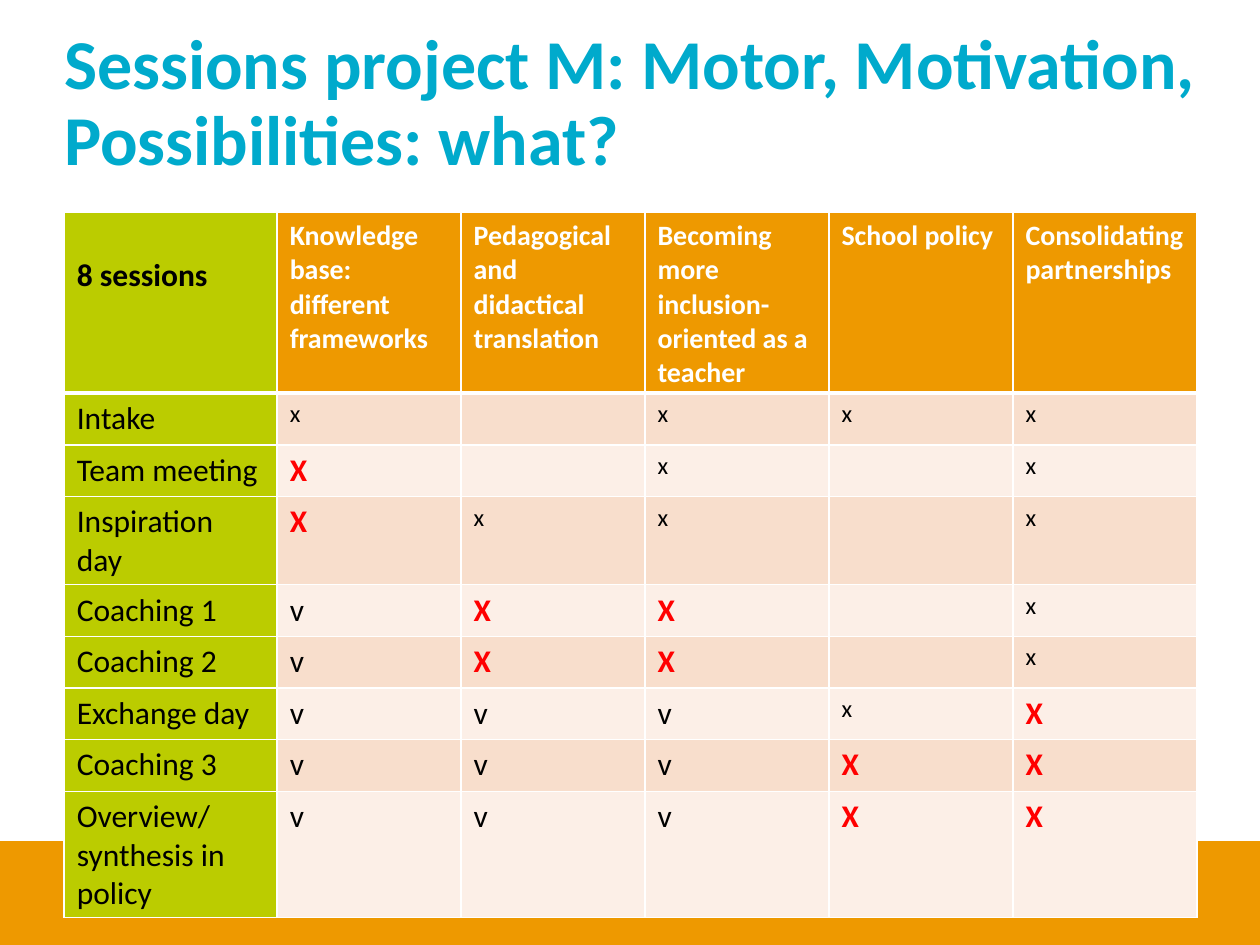
from typing import NamedTuple

from lxml.etree import SubElement
from pptx import Presentation
from pptx.dml.color import RGBColor
from pptx.enum.shapes import MSO_SHAPE
from pptx.enum.text import MSO_ANCHOR
from pptx.oxml.ns import qn
from pptx.util import Inches, Pt

WIDTH, HEIGHT = Inches(10), Inches(7.5)
LEFT, CONTENT_WIDTH = 0.051, 0.898  # shares of the slide width
FONT = "Calibri"
COLORS = {
    "title": "00AACC",
    "orange": "EE9900",
    "green": "BBCC00",
    "dark_band": "F8DECC",
    "light_band": "FCEFE7",
    "white": "FFFFFF",
    "black": "000000",
    "red": "FF0000",
}


class TextStyle(NamedTuple):
    size: int
    color: str
    bold: bool = False


class Session(NamedTuple):
    label: str
    marks: str  # one per theme; "-" leaves the cell empty
    height: float = 0.41


TITLE = TextStyle(40, "title", True)
CORNER = TextStyle(18, "black", True)
THEME = TextStyle(16, "white", True)
LABEL = TextStyle(18, "black")
MARKS = {
    "x": TextStyle(14, "black"),
    "X": TextStyle(18, "red", True),
    "v": TextStyle(18, "black"),
}

THEMES = [
    "Knowledge base: different frameworks",
    "Pedagogical and didactical translation",
    "Becoming more inclusion-oriented as a teacher",
    "School policy",
    "Consolidating partnerships",
]
SESSIONS = [
    Session("Intake", "x-xxx"),
    Session("Team meeting", "X-x-x"),
    Session("Inspiration day", "Xxx-x"),
    Session("Coaching 1", "vXX-x"),
    Session("Coaching 2", "vXX-x"),
    Session("Exchange day", "vvvxX"),
    Session("Coaching 3", "vvvXX"),
    Session("Overview/ synthesis in policy", "vvvXX", 0.7),
]
HEADER_HEIGHT = 1.4
LABEL_WIDTH, THEME_WIDTH = 1.69, 1.46


def rgb(name: str) -> RGBColor:
    return RGBColor.from_string(COLORS[name])


def write(frame, text: str, style: TextStyle) -> None:
    frame.text = text
    for run in frame.paragraphs[0].runs:
        run.font.name = FONT
        run.font.size = Pt(style.size)
        run.font.bold = style.bold
        run.font.color.rgb = rgb(style.color)


def set_borders(cell, bottom: int) -> None:
    properties = cell._tc.get_or_add_tcPr()
    for side, points in (("L", 1), ("R", 1), ("T", 1), ("B", bottom)):
        line = SubElement(properties, qn(f"a:ln{side}"), w=str(Pt(points)))
        fill = SubElement(line, qn("a:solidFill"))
        SubElement(fill, qn("a:srgbClr"), val=COLORS["white"])


def fill_cell(cell, text: str, style: TextStyle, color: str, bottom: int = 1) -> None:
    set_borders(cell, bottom)
    cell.fill.solid()
    cell.fill.fore_color.rgb = rgb(color)
    write(cell.text_frame, text, style)


def add_footer_band(slide) -> None:
    top = int(HEIGHT * 0.89)
    band = slide.shapes.add_shape(MSO_SHAPE.RECTANGLE, 0, top, WIDTH, HEIGHT - top)
    band.shadow.inherit = False
    band.fill.solid()
    band.fill.fore_color.rgb = rgb("orange")
    band.line.fill.background()


def add_title(slide, text: str) -> None:
    box = slide.shapes.add_textbox(
        int(WIDTH * LEFT), int(HEIGHT * 0.024),
        int(WIDTH * CONTENT_WIDTH), int(HEIGHT * 0.167),
    )
    frame = box.text_frame
    frame.word_wrap = True
    frame.vertical_anchor = MSO_ANCHOR.BOTTOM
    frame.margin_left = frame.margin_right = 0
    frame.margin_top = frame.margin_bottom = 0
    write(frame, text, TITLE)
    frame.paragraphs[0].line_spacing = 0.9


def add_session_table(slide) -> None:
    heights = [HEADER_HEIGHT] + [session.height for session in SESSIONS]
    widths = [LABEL_WIDTH] + [THEME_WIDTH] * len(THEMES)
    table = slide.shapes.add_table(
        len(heights), len(widths), int(WIDTH * LEFT), int(HEIGHT * 0.225),
        Inches(sum(widths)), Inches(sum(heights)),
    ).table
    for row, height in zip(table.rows, heights):
        row.height = Inches(height)
    for column, width in zip(table.columns, widths):
        column.width = Inches(width)

    corner = table.cell(0, 0)
    fill_cell(corner, "8 sessions", CORNER, "green", bottom=3)
    corner.margin_top = Inches(0.35)
    for column, theme in enumerate(THEMES, 1):
        fill_cell(table.cell(0, column), theme, THEME, "orange", bottom=3)

    for row, session in enumerate(SESSIONS, 1):
        fill_cell(table.cell(row, 0), session.label, LABEL, "green")
        band = "dark_band" if row % 2 else "light_band"
        for column, mark in enumerate(session.marks, 1):
            text = mark.replace("-", "")
            fill_cell(table.cell(row, column), text, MARKS.get(mark, LABEL), band)


def main() -> None:
    deck = Presentation()
    deck.slide_width, deck.slide_height = WIDTH, HEIGHT
    slide = deck.slides.add_slide(deck.slide_layouts[6])
    add_footer_band(slide)
    add_title(slide, "Sessions project M: Motor, Motivation, Possibilities: what?")
    add_session_table(slide)
    deck.save("out.pptx")


if __name__ == "__main__":
    main()
